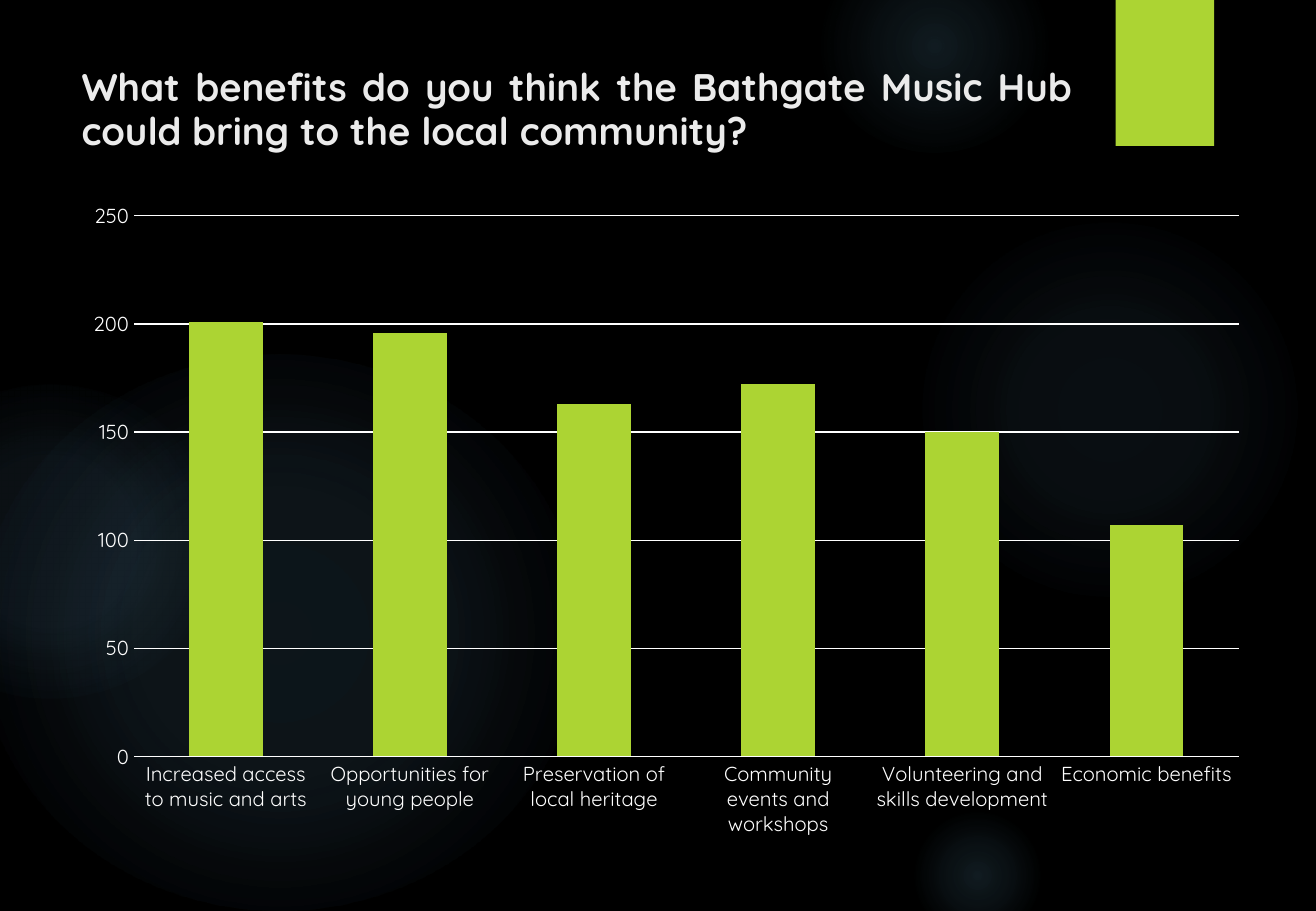
from dataclasses import dataclass

from pptx import Presentation
from pptx import util as u
from pptx.chart import axis as chart_axis
from pptx.chart import data as chart_data
from pptx.dml import color
from pptx.enum import chart as chart_enum
from pptx.enum import shapes, text
from pptx.oxml import parse_xml
from pptx.oxml import ns
from pptx.shapes import autoshape
from pptx.slide import Slide

COLOURS = {
    "background": "000000",
    "glow": "7AC4F0",
    "accent": "ACD433",
    "title": "EBEBEB",
    "chart": "FFFFFF",
}
FONT = "Quicksand"
TITLE = "What benefits do you think the Bathgate Music Hub could bring to the local community?"
BENEFITS = {
    "Increased access to music and arts": 201,
    "Opportunities for young people": 196,
    "Preservation of local heritage": 163,
    "Community events and workshops": 172,
    "Volunteering and skills development": 150,
    "Economic benefits": 107,
}
PLOT_LAYOUT = {"x": 0.054, "y": 0.038, "w": 0.926, "h": 0.818}


@dataclass(frozen=True)
class Box:
    left: float
    top: float
    width: float
    height: float

    def lengths(self) -> tuple[u.Cm, u.Cm, u.Cm, u.Cm]:
        return u.Cm(self.left), u.Cm(self.top), u.Cm(self.width), u.Cm(self.height)


@dataclass(frozen=True)
class Glow:
    box: Box
    stops: tuple[tuple[int, int], ...]


GLOWS = (
    Glow(Box(18.95, 4.65, 8.48, 7.82), ((0, 7), (36, 6), (69, 0))),
    Glow(Box(17.12, -1.27, 4.83, 4.45), ((0, 14), (36, 7), (73, 0))),
    Glow(Box(18.95, 16.94, 2.97, 2.74), ((0, 14), (36, 7), (66, 0))),
    Glow(Box(-0.46, 7.42, 12.62, 11.63), ((0, 11), (36, 10), (75, 0))),
    Glow(Box(-2.51, 8.05, 7.11, 6.55), ((0, 8), (36, 8), (72, 0))),
)
TAB_BOX = Box(23.32, 0, 2.06, 3.05)
TITLE_BOX = Box(1.45, 1.27, 21.23, 2.72)
CHART_BOX = Box(1.45, 3.99, 24.94, 13.82)


def rgb(name: str) -> color.RGBColor:
    return color.RGBColor.from_string(COLOURS[name])


def add_plain_shape(slide: Slide, kind: shapes.MSO_SHAPE, box: Box) -> autoshape.Shape:
    shape = slide.shapes.add_shape(kind, *box.lengths())
    shape.shadow.inherit = False
    shape.line.fill.background()
    return shape


def add_glow(slide: Slide, glow: Glow) -> None:
    shape = add_plain_shape(slide, shapes.MSO_SHAPE.OVAL, glow.box)
    shape.fill.background()
    stops = "".join(
        f'<a:gs pos="{position * 1000}"><a:srgbClr val="{COLOURS["glow"]}">'
        f'<a:alpha val="{alpha * 1000}"/></a:srgbClr></a:gs>'
        for position, alpha in glow.stops
    )
    gradient = parse_xml(
        f'<a:gradFill {ns.nsdecls("a")} rotWithShape="1"><a:gsLst>{stops}</a:gsLst>'
        '<a:path path="circle"><a:fillToRect l="50000" t="50000" r="50000" b="50000"/>'
        "</a:path></a:gradFill>"
    )
    properties = shape.element.spPr
    properties.replace(properties.find(ns.qn("a:noFill")), gradient)


def add_tab(slide: Slide) -> None:
    shape = add_plain_shape(slide, shapes.MSO_SHAPE.RECTANGLE, TAB_BOX)
    shape.fill.solid()
    shape.fill.fore_color.rgb = rgb("accent")
    shadow = parse_xml(
        f'<a:outerShdw {ns.nsdecls("a")} blurRad="{u.Pt(3)}" dist="{u.Pt(2)}" dir="5400000" '
        f'rotWithShape="0"><a:srgbClr val="{COLOURS["background"]}"><a:alpha val="45000"/>'
        "</a:srgbClr></a:outerShdw>"
    )
    shape.element.spPr.find(ns.qn("a:effectLst")).append(shadow)


def fill_title(slide: Slide) -> None:
    title = slide.shapes.title
    title.left, title.top, title.width, title.height = TITLE_BOX.lengths()
    frame = title.text_frame
    frame.text = TITLE
    frame.word_wrap = True
    frame.auto_size = text.MSO_AUTO_SIZE.NONE
    frame.vertical_anchor = text.MSO_ANCHOR.TOP
    paragraph = frame.paragraphs[0]
    paragraph.alignment = text.PP_ALIGN.JUSTIFY
    paragraph.line_spacing = 0.95
    paragraph.font.name = FONT
    paragraph.font.size = u.Pt(22.8)
    paragraph.font.bold = True
    paragraph.font.color.rgb = rgb("title")
    slide.shapes.element.append(title.element)


def format_axis(axis: chart_axis._BaseAxis) -> None:
    axis.major_tick_mark = chart_enum.XL_TICK_MARK.NONE
    axis.minor_tick_mark = chart_enum.XL_TICK_MARK.NONE
    axis.format.line.fill.background()
    axis.tick_labels.font.name = FONT
    axis.tick_labels.font.size = u.Pt(12)
    axis.tick_labels.font.color.rgb = rgb("chart")


def add_benefits_chart(slide: Slide) -> None:
    data = chart_data.CategoryChartData()
    data.categories = list(BENEFITS)
    data.add_series("Series 1", list(BENEFITS.values()))
    chart = slide.shapes.add_chart(
        chart_enum.XL_CHART_TYPE.COLUMN_CLUSTERED, *CHART_BOX.lengths(), data
    ).chart
    chart.has_legend = False
    chart.has_title = False
    chart.font.name = FONT
    chart.font.size = u.Pt(10)
    chart.font.color.rgb = rgb("chart")

    plot = chart.plots[0]
    plot.gap_width = 150
    plot.vary_by_categories = False
    column_fill = plot.series[0].format.fill
    column_fill.solid()
    column_fill.fore_color.rgb = rgb("accent")

    format_axis(chart.category_axis)
    value_axis = chart.value_axis
    format_axis(value_axis)
    value_axis.minimum_scale = 0
    value_axis.maximum_scale = 250
    value_axis.major_unit = 50
    value_axis.has_major_gridlines = True
    gridline = value_axis.major_gridlines.format.line
    gridline.color.rgb = rgb("chart")
    gridline.width = u.Pt(0.75)

    plot_area = chart.element.find(f'.//{ns.qn("c:plotArea")}')
    for layout in plot_area.findall(ns.qn("c:layout")):
        plot_area.remove(layout)
    sizes = "".join(f'<c:{key} val="{value}"/>' for key, value in PLOT_LAYOUT.items())
    plot_area.insert(0, parse_xml(
        f'<c:layout {ns.nsdecls("c")}><c:manualLayout><c:layoutTarget val="inner"/>'
        f'<c:xMode val="edge"/><c:yMode val="edge"/>{sizes}</c:manualLayout></c:layout>'
    ))


def main() -> None:
    presentation = Presentation()
    presentation.slide_width = u.Cm(27.51)
    presentation.slide_height = u.Cm(19.05)
    slide = presentation.slides.add_slide(presentation.slide_layouts.get_by_name("Title Only"))
    slide.background.fill.solid()
    slide.background.fill.fore_color.rgb = rgb("background")
    for glow in GLOWS:
        add_glow(slide, glow)
    add_tab(slide)
    fill_title(slide)
    add_benefits_chart(slide)
    presentation.save("out.pptx")


if __name__ == "__main__":
    main()
